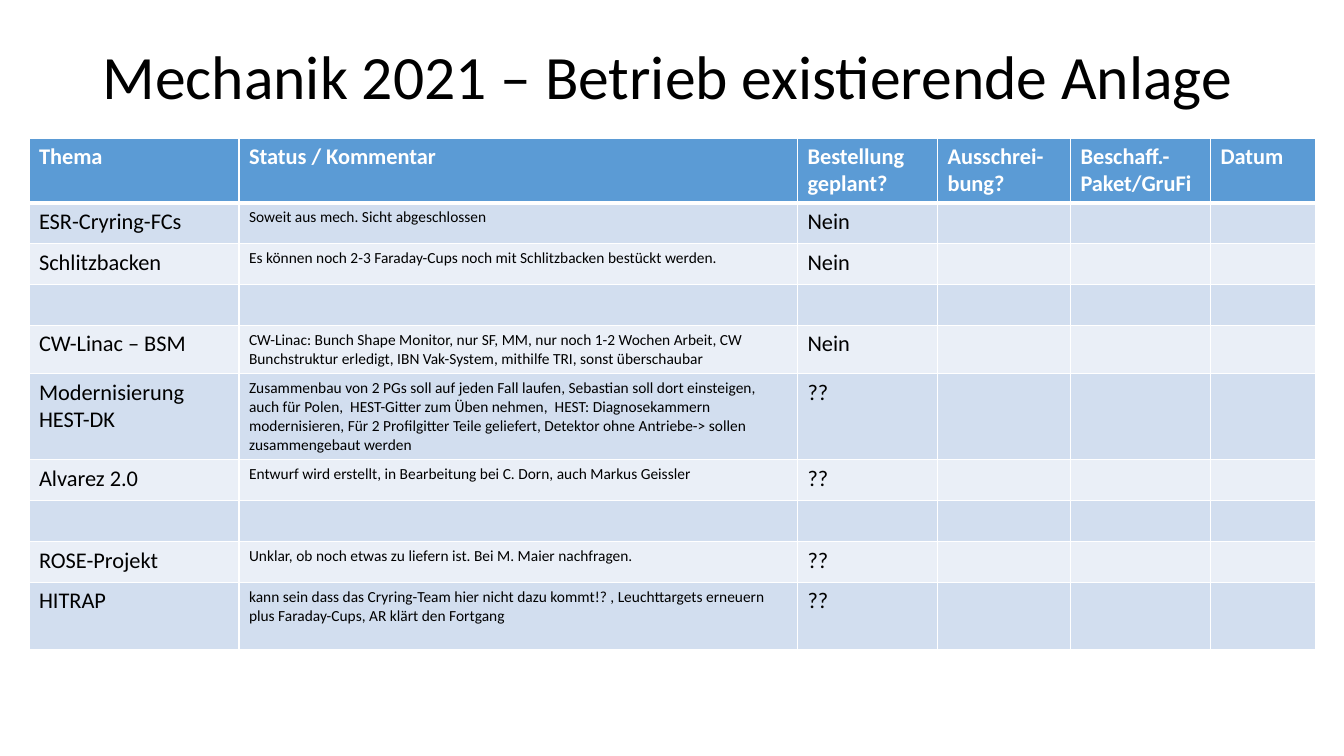
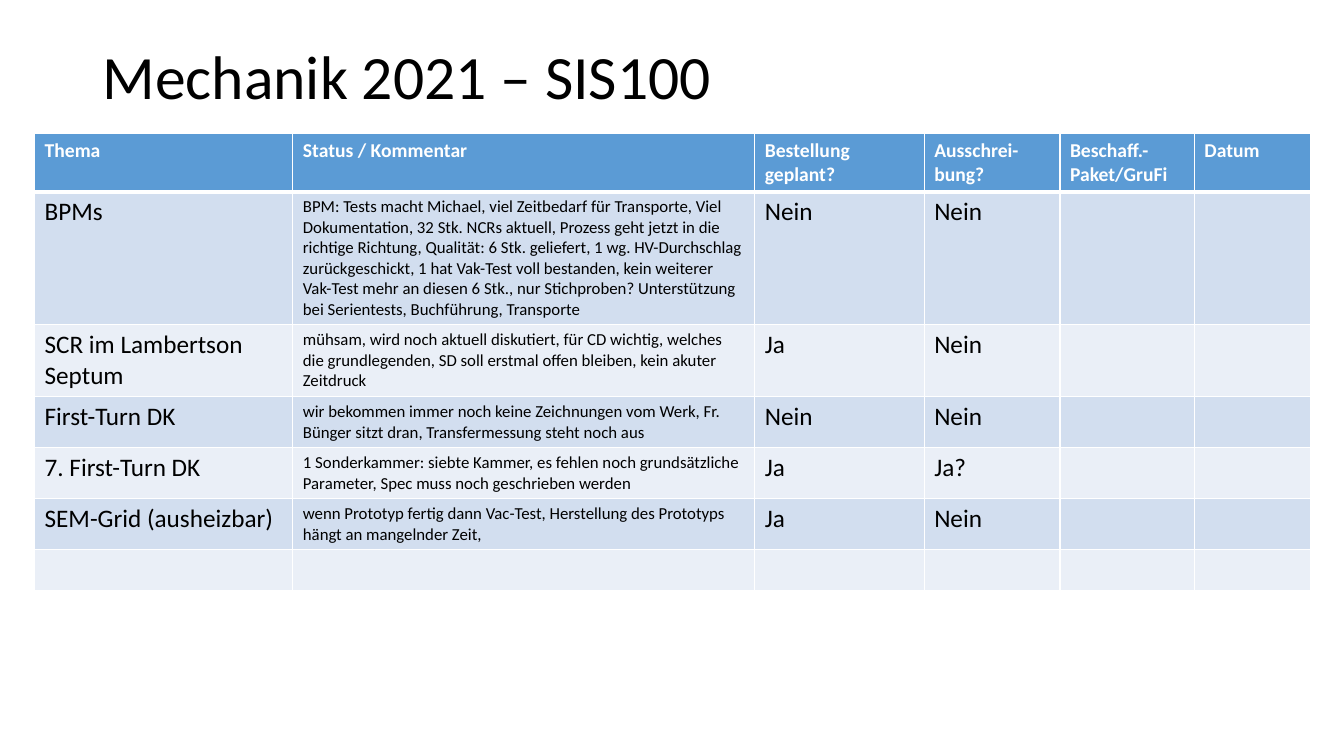
import pptx
import pptx.util
import pptx.dml.color
import pptx.enum.text
import pptx.oxml.ns
import lxml.etree

Pt = pptx.util.Pt

FONT = "Calibri"
COLOURS = {
    "header": "5B9BD5",
    "odd": "D2DEEF",
    "even": "EAEFF7",
    "white": "FFFFFF",
    "text": "000000",
}
TITLE_BOX = (66, 28.8, 828, 56)
HEADINGS = ["Thema", "Status / Kommentar", "Bestellung geplant?",
            "Ausschrei-bung?", "Beschaff.-Paket/GruFi", "Datum"]
STATUS_COLUMN = HEADINGS.index("Status / Kommentar")

# Each topic: row height, then the filled cells from the left
OPERATION = {
    "title": "Mechanik 2021 – Betrieb existierende Anlage",
    "position": (20.7, 98.6),
    "widths": [150, 399, 100, 95, 100, 75],
    "sizes": {"header": 16, "body": 16, "status": 11},
    "header_height": 46.4,
    "topics": [
        (29.2, "ESR-Cryring-FCs", "Soweit aus mech. Sicht abgeschlossen", "Nein"),
        (29.2, "Schlitzbacken",
         "Es können noch 2-3 Faraday-Cups noch mit Schlitzbacken bestückt werden.", "Nein"),
        (29.2,),
        (34.3, "CW-Linac – BSM",
         "CW-Linac: Bunch Shape Monitor, nur SF, MM, nur noch 1-2 Wochen Arbeit, CW "
         "Bunchstruktur erledigt, IBN Vak-System, mithilfe TRI, sonst überschaubar", "Nein"),
        (61.4, "Modernisierung HEST-DK",
         "Zusammenbau von 2 PGs soll auf jeden Fall laufen, Sebastian soll dort einsteigen, "
         "auch für Polen,  HEST-Gitter zum Üben nehmen,  HEST: Diagnosekammern "
         "modernisieren, Für 2 Profilgitter Teile geliefert, Detektor ohne Antriebe-> sollen "
         "zusammengebaut werden", "??"),
        (29.2, "Alvarez 2.0",
         "Entwurf wird erstellt, in Bearbeitung bei C. Dorn, auch Markus Geissler", "??"),
        (29.2,),
        (29.2, "ROSE-Projekt",
         "Unklar, ob noch etwas zu liefern ist. Bei M. Maier nachfragen.", "??"),
        (47.6, "HITRAP",
         "kann sein dass das Cryring-Team hier nicht dazu kommt!? , Leuchttargets erneuern "
         "plus Faraday-Cups, AR klärt den Fortgang", "??"),
    ],
}
SIS100 = {
    "title": "Mechanik 2021 – SIS100",
    "position": (24.7, 95.6),
    "widths": [184.5, 330, 121, 97, 96, 83],
    "sizes": {"header": 14, "body": 18, "status": 12},
    "header_height": 41,
    "topics": [
        (95, "BPMs",
         "BPM: Tests macht Michael, viel Zeitbedarf für Transporte, Viel Dokumentation, "
         "32 Stk. NCRs aktuell, Prozess geht jetzt in die richtige Richtung, Qualität: "
         "6 Stk. geliefert, 1 wg. HV-Durchschlag zurückgeschickt, 1 hat Vak-Test voll "
         "bestanden, kein weiterer Vak-Test mehr an diesen 6 Stk., nur Stichproben? "
         "Unterstützung bei Serientests, Buchführung, Transporte", "Nein", "Nein"),
        (51.4, "SCR im Lambertson Septum",
         "mühsam, wird noch aktuell diskutiert, für CD wichtig, welches die grundlegenden, "
         "SD soll erstmal offen bleiben, kein akuter Zeitdruck", "Ja", "Nein"),
        (36.4, "First-Turn DK",
         "wir bekommen immer noch keine Zeichnungen vom Werk, Fr. Bünger sitzt dran, "
         "Transfermessung steht noch aus", "Nein", "Nein"),
        (36.4, "7. First-Turn DK",
         "1 Sonderkammer: siebte Kammer, es fehlen noch grundsätzliche Parameter, "
         "Spec muss noch geschrieben werden", "Ja", "Ja?"),
        (36.4, "SEM-Grid (ausheizbar)",
         "wenn Prototyp fertig dann Vac-Test, Herstellung des Prototyps hängt an "
         "mangelnder Zeit,", "Ja", "Nein"),
        (29.2,),
    ],
}


def colour(name):
    return pptx.dml.color.RGBColor.from_string(COLOURS[name])


def format_paragraph(paragraph, size, colour_name, bold=False):
    paragraph.font.name = FONT
    paragraph.font.size = Pt(size)
    paragraph.font.bold = bold
    paragraph.font.color.rgb = colour(colour_name)


def add_borders(cell, widths):
    """Draw white cell borders; widths maps a side (L, R, T, B) to points."""
    qn = pptx.oxml.ns.qn
    properties = cell._tc.get_or_add_tcPr()
    for side, width in widths.items():
        line = lxml.etree.SubElement(properties, qn(f"a:ln{side}"), w=str(int(Pt(width))))
        fill = lxml.etree.SubElement(line, qn("a:solidFill"))
        lxml.etree.SubElement(fill, qn("a:srgbClr"), val=COLOURS["white"])


def fill_cell(cell, text, fill_name, size, is_header, borders):
    add_borders(cell, borders)
    cell.fill.solid()
    cell.fill.fore_color.rgb = colour(fill_name)
    if text:
        cell.text = text
        format_paragraph(cell.text_frame.paragraphs[0], size,
                         "white" if is_header else "text", is_header)


def add_title(slide, text, box):
    title = slide.shapes.title
    title.left, title.top, title.width, title.height = map(Pt, box)
    title.text_frame.text = text
    title.text_frame.vertical_anchor = pptx.enum.text.MSO_ANCHOR.MIDDLE
    paragraph = title.text_frame.paragraphs[0]
    paragraph.alignment = pptx.enum.text.PP_ALIGN.LEFT
    paragraph.line_spacing = 0.9
    format_paragraph(paragraph, 44, "text")


def add_status_table(slide, content):
    sizes = content["sizes"]
    rows = [(content["header_height"], *HEADINGS), *content["topics"]]
    box = (*content["position"], sum(content["widths"]), sum(row[0] for row in rows))
    table = slide.shapes.add_table(len(rows), len(HEADINGS), *map(Pt, box)).table
    for column, width in zip(table.columns, content["widths"]):
        column.width = Pt(width)

    for row_index, (height, *texts) in enumerate(rows):
        table.rows[row_index].height = Pt(height)
        is_header = row_index == 0
        fill_name = "header" if is_header else ("even", "odd")[row_index % 2]
        # The thick rule lies between the header and the first topic
        borders = {"L": 1, "R": 1, "T": 3 if row_index == 1 else 1, "B": 3 if is_header else 1}
        for column_index in range(len(HEADINGS)):
            text = texts[column_index] if column_index < len(texts) else ""
            kind = "status" if column_index == STATUS_COLUMN else "body"
            size = sizes["header" if is_header else kind]
            fill_cell(table.cell(row_index, column_index), text, fill_name, size,
                      is_header, borders)


def add_status_slide(presentation, content):
    slide = presentation.slides.add_slide(presentation.slide_layouts.get_by_name("Title Only"))
    add_title(slide, content["title"], TITLE_BOX)
    add_status_table(slide, content)


def main():
    presentation = pptx.Presentation()
    presentation.slide_width, presentation.slide_height = Pt(960), Pt(540)
    for content in (OPERATION, SIS100):
        add_status_slide(presentation, content)
    presentation.save("out.pptx")


if __name__ == "__main__":
    main()
